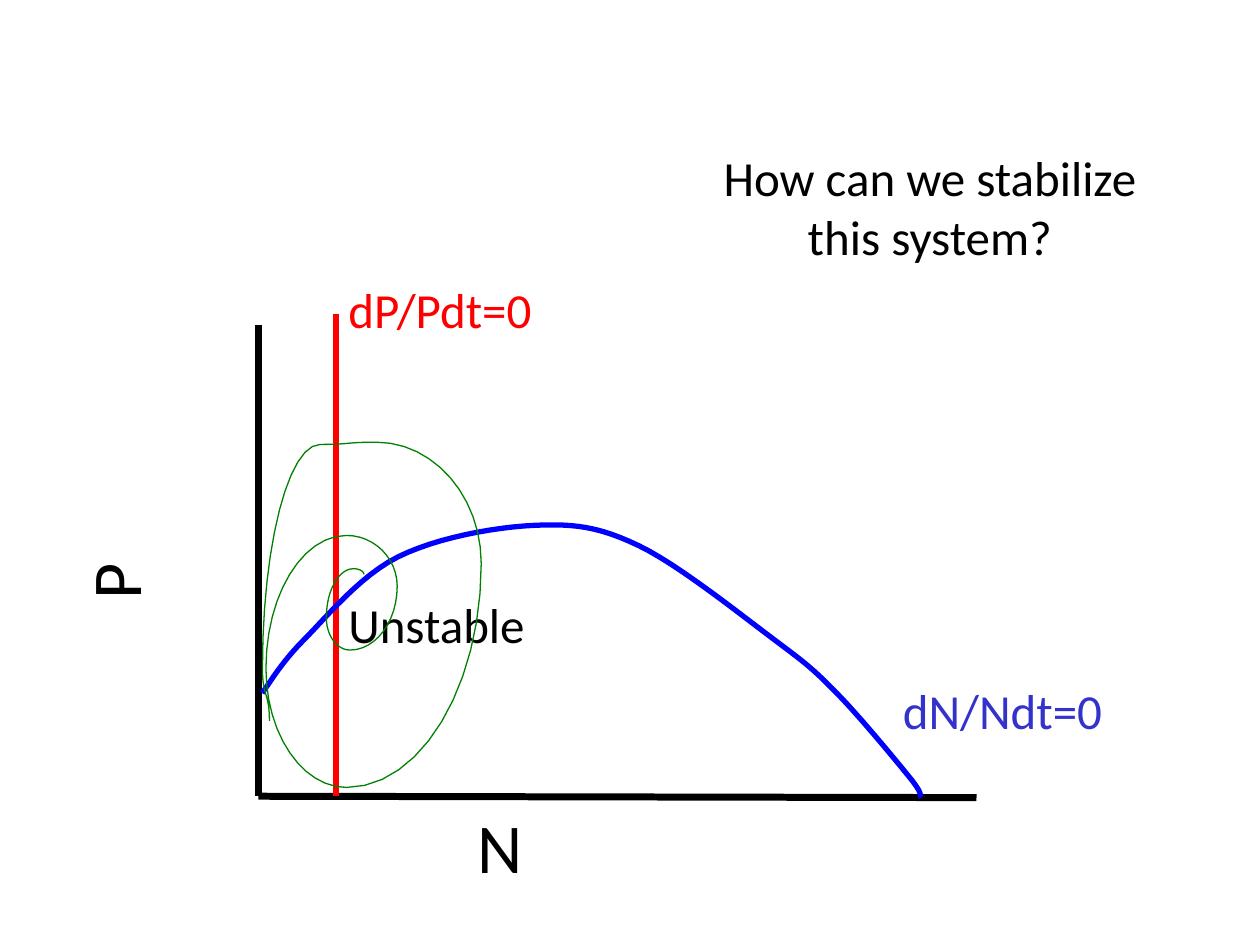
from dataclasses import dataclass
from itertools import pairwise

from lxml.etree import SubElement
from pptx import Presentation
from pptx.dml.color import RGBColor
from pptx.enum.shapes import MSO_CONNECTOR as Connector
from pptx.enum.text import MSO_AUTO_SIZE as AutoSize, PP_ALIGN as Align
from pptx.oxml.ns import qn
from pptx.util import Pt

Point = tuple[float, float]
Bezier = tuple[Point, Point, Point, Point]

BLACK, RED, BLUE, INDIGO, GREEN = "000000", "FF0000", "0000FF", "3333CC", "008000"
FONT = "Calibri"
ORIGIN = (147.6, 455)
P_AXIS_TOP = (147.6, 185.8)
N_AXIS_END = (558, 455.8)
PREDATOR_X, PREDATOR_TOP = 192, 179.3
ARC_HANDLE = 0.55
STEPS = 12


@dataclass
class Label:
    text: str
    left: float
    top: float
    width: float
    height: float
    color: str = BLACK
    size: float = 28
    align: Align = Align.LEFT
    wrap: bool = True
    spacing: float = 1
    rotation: float = 0


@dataclass
class Segment:
    start: Point
    end: Point
    color: str
    weight: float


@dataclass
class Curve:
    pieces: list[Bezier]
    color: str
    weight: float


@dataclass
class Turn:
    x: float
    y: float

    def handle_toward(self, other: "Turn") -> Point:
        return self.x, self.y


@dataclass
class Side(Turn):
    def handle_toward(self, other: Turn) -> Point:
        return self.x, self.y + ARC_HANDLE * (other.y - self.y)


@dataclass
class Crest(Turn):
    def handle_toward(self, other: Turn) -> Point:
        return self.x + ARC_HANDLE * (other.x - self.x), self.y


PREY_KNOTS = [
    (149.8, 396), (173.5, 365.8), (227.5, 318.2), (305.3, 300.2), (365, 311.8),
    (442.8, 365.8), (478.1, 396), (519.8, 444.2), (526.3, 455.8),
]

INNER_LOOP = [Side(208, 328.3), Crest(202, 325), Side(186.5, 353), Crest(200, 371.5)]
MIDDLE_LOOP = [Side(227, 335), Crest(198, 306), Side(152, 382), Crest(198, 450)]
OUTER_LOOP = [Side(275, 322), Crest(215, 252.7), Crest(183, 254), Side(150, 382)]
SPIRAL_END = [Side(154, 412)]
SPIRAL_TURNS = INNER_LOOP + MIDDLE_LOOP + OUTER_LOOP + SPIRAL_END


def rgb(color: str) -> RGBColor:
    return RGBColor.from_string(color)


def smooth_through(knots: list[Point]) -> list[Bezier]:
    padded = [knots[0], *knots, knots[-1]]
    pieces = []
    for before, start, end, after in zip(padded, padded[1:], padded[2:], padded[3:]):
        leaving = tuple(s + (e - b) / 6 for b, s, e in zip(before, start, end))
        arriving = tuple(e - (a - s) / 6 for s, e, a in zip(start, end, after))
        pieces.append((start, leaving, arriving, end))
    return pieces


def arcs_between(turns: list[Turn]) -> list[Bezier]:
    return [((a.x, a.y), a.handle_toward(b), b.handle_toward(a), (b.x, b.y))
            for a, b in pairwise(turns)]


def point_on(piece: Bezier, t: float) -> Point:
    weights = ((1 - t) ** 3, 3 * t * (1 - t) ** 2, 3 * t * t * (1 - t), t ** 3)
    x, y = (sum(w * value for w, value in zip(weights, axis)) for axis in zip(*piece))
    return x, y


def draw_label(slide, label: Label) -> None:
    box = slide.shapes.add_textbox(
        Pt(label.left), Pt(label.top), Pt(label.width), Pt(label.height))
    box.rotation = label.rotation
    frame = box.text_frame
    frame.word_wrap = label.wrap
    frame.auto_size = AutoSize.SHAPE_TO_FIT_TEXT
    paragraph = frame.paragraphs[0]
    paragraph.alignment = label.align
    paragraph.line_spacing = label.spacing
    run = paragraph.add_run()
    run.text = label.text
    run.font.name = FONT
    run.font.size = Pt(label.size)
    run.font.color.rgb = rgb(label.color)


def draw_segment(slide, segment: Segment) -> None:
    ends = [Pt(value) for value in segment.start + segment.end]
    connector = slide.shapes.add_connector(Connector.STRAIGHT, *ends)
    connector.line.color.rgb = rgb(segment.color)
    connector.line.width = Pt(segment.weight)
    SubElement(connector._element.spPr, qn("a:effectLst"))


def draw_curve(slide, curve: Curve) -> None:
    start_x, start_y = curve.pieces[0][0]
    points = [point_on(piece, step / STEPS)
              for piece in curve.pieces for step in range(1, STEPS + 1)]
    builder = slide.shapes.build_freeform(Pt(start_x), Pt(start_y))
    builder.add_line_segments([(Pt(x), Pt(y)) for x, y in points], close=False)
    shape = builder.convert_to_shape()
    shape.fill.background()
    shape.line.color.rgb = rgb(curve.color)
    shape.line.width = Pt(curve.weight)
    shape.shadow.inherit = False


def draw_axes(slide) -> None:
    for axis_end in (P_AXIS_TOP, N_AXIS_END):
        draw_segment(slide, Segment(ORIGIN, axis_end, BLACK, 4))
    axis_style = dict(size=40, wrap=False, spacing=1.15)
    draw_label(slide, Label("N", 265.7, 448.6, 46.1, 62.6, **axis_style))
    draw_label(slide, Label("P", 42.5, 300.2, 37.4, 61.9, rotation=270, **axis_style))


def draw_isoclines(slide) -> None:
    draw_label(slide, Label("dN/Ndt=0", 473.8, 385.2, 198, 41, INDIGO, align=Align.CENTER))
    draw_segment(slide, Segment(
        (PREDATOR_X, PREDATOR_TOP), (PREDATOR_X, ORIGIN[1]), RED, 3))
    draw_label(slide, Label("dP/Pdt=0", PREDATOR_X, 156.2, 198, 41, RED))
    draw_curve(slide, Curve(smooth_through(PREY_KNOTS), BLUE, 3))


def main() -> None:
    presentation = Presentation()
    presentation.slide_width, presentation.slide_height = Pt(720), Pt(540)
    slide = presentation.slides.add_slide(presentation.slide_layouts[6])
    draw_axes(slide)
    draw_isoclines(slide)
    draw_label(slide, Label("Unstable", PREDATOR_X, 336.2, 246.2, 41))
    draw_label(slide, Label("How can we stabilize this system?", 390.2, 80.6, 282.2, 74.9,
                            align=Align.CENTER))
    draw_curve(slide, Curve(arcs_between(SPIRAL_TURNS), GREEN, 0.75))
    presentation.save("out.pptx")


if __name__ == "__main__":
    main()
